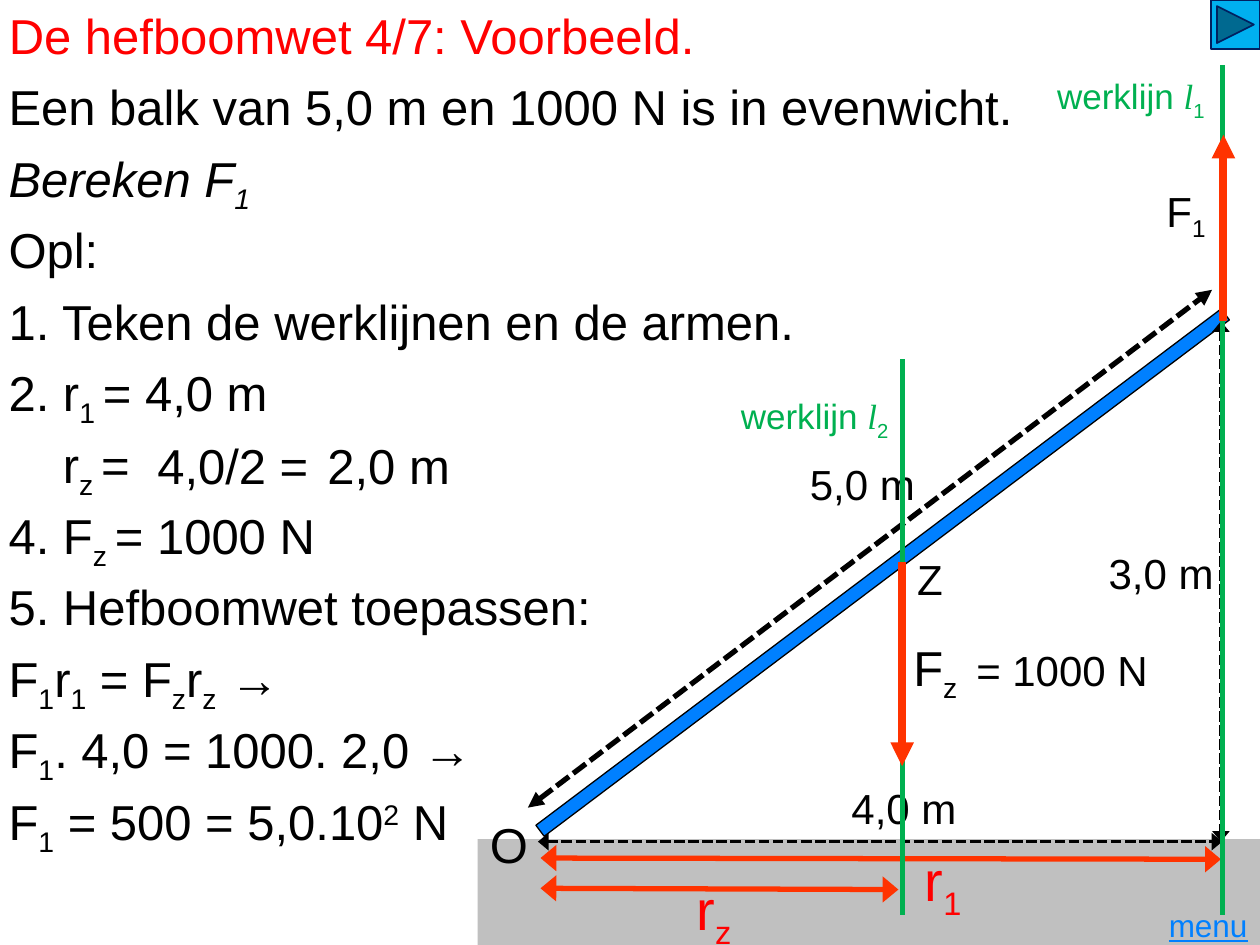
from lxml import etree
from pptx import Presentation
from pptx.dml.color import RGBColor
from pptx.enum import dml, shapes, text
from pptx.oxml import ns
from pptx.util import Inches, Pt

BLACK = RGBColor(0x00, 0x00, 0x00)
RED = RGBColor(0xFF, 0x00, 0x00)
FORCE = RGBColor(0xFF, 0x33, 0x00)
GREEN = RGBColor(0x00, 0xB0, 0x50)
BLUE = RGBColor(0x00, 0x80, 0xFF)
GREY = RGBColor(0xC0, 0xC0, 0xC0)
CYAN = RGBColor(0x00, 0xB0, 0xF0)
NAVY = RGBColor(0x00, 0x20, 0x60)

deck = Presentation()
deck.slide_width, deck.slide_height = Inches(10), Inches(7.5)
slide = deck.slides.add_slide(deck.slide_layouts[5])


def write(words, left, top, width, height=0.57, size=28, color=BLACK,
          italic=False, underline=False, right=False, middle=False, box=None):
    """Odd parts between ~ are subscripts, ^ marks a superscript, * a symbol."""
    box = box or slide.shapes.add_textbox(0, 0, 0, 0)
    box.left, box.top = Inches(left), Inches(top)
    box.width, box.height = Inches(width), Inches(height)
    frame = box.text_frame
    frame.word_wrap = True
    frame.auto_size = text.MSO_AUTO_SIZE.NONE
    frame.vertical_anchor = text.MSO_ANCHOR.MIDDLE if middle else text.MSO_ANCHOR.TOP
    para = frame.paragraphs[0]
    para.alignment = text.PP_ALIGN.RIGHT if right else text.PP_ALIGN.LEFT
    for spot, part in enumerate(words.split("~")):
        if not part:
            continue
        run = para.add_run()
        run.text = part.lstrip("^*")
        font = run.font
        font.size, font.color.rgb = Pt(size), color
        font.name = "Times New Roman" if part[0] == "*" else "Arial"
        font.italic = italic or part[0] == "*"
        font.underline = underline
        if spot % 2 and part[0] != "*":
            level = "30000" if part[0] == "^" else "-25000"
            run._r.get_or_add_rPr().set("baseline", level)


def draw(start, end, color, width, heads=(), span="med", dash=False):
    """Heads holds headEnd (at start) and tailEnd (at end)."""
    link = slide.shapes.add_connector(
        shapes.MSO_CONNECTOR.STRAIGHT, *map(Inches, start + end))
    link.line.color.rgb, link.line.width = color, Pt(width)
    if dash:
        link.line.dash_style = dml.MSO_LINE.SQUARE_DOT
    for head in heads:
        etree.SubElement(link.line._get_or_add_ln(), ns.qn("a:" + head),
                         type="triangle", w=span, len="med")
    etree.SubElement(link._element.spPr, ns.qn("a:effectLst"))


BOTH = ("headEnd", "tailEnd")
TIP = ("tailEnd",)

# Title
write("De hefboomwet 4/7: Voorbeeld.", -0.03, -0.01, 8.5, color=RED,
      box=slide.shapes.title)

# Ground, beam and forward button
for kind, place, turn, fill, edge, weight in [
    (shapes.MSO_SHAPE.RECTANGLE, (3.79, 6.66, 6.22, 0.88), 0, GREY, None, 0),
    (shapes.MSO_SHAPE.RECTANGLE, (6.95, 1.14, 0.11, 6.81), 53, BLUE, BLACK, 0.75),
    (shapes.MSO_SHAPE.ACTION_BUTTON_FORWARD_OR_NEXT, (9.61, 0, 0.39, 0.39),
     0, CYAN, NAVY, 1),
]:
    shape = slide.shapes.add_shape(kind, *map(Inches, place))
    shape.rotation = turn
    shape.shadow.inherit = False
    shape.fill.solid()
    shape.fill.fore_color.rgb = fill
    if edge is None:
        shape.line.fill.background()
    else:
        shape.line.color.rgb, shape.line.width = edge, Pt(weight)

# Problem and worked solution, one line per step
steps = [
    "Een balk van 5,0 m en 1000 N is in evenwicht.",
    "Bereken F~1",
    "Opl:",
    "1. Teken de werklijnen en de armen.",
    "2. r~1 ~= 4,0 m",
    None,
    "4. F~z ~= 1000 N",
    "5. Hefboomwet toepassen:",
    "F~1~r~1~ = F~z~r~z~ →",
    "F~1~. 4,0 = 1000. 2,0 →",
    "F~1~ = 500 = 5,0.10~^2~ N",
]
for row, step in enumerate(steps):
    if step:
        write(step, -0.03, 0.56 + 0.567 * row, 10 if row < 4 else 5.6,
              italic=step.startswith("Bereken"))
write("r~z ~=", 0.4, 3.4, 0.93)
write("4,0/2 =", 1.15, 3.41, 1.55)
write("2,0 m", 2.5, 3.41, 1.51)

# Dimensions
draw((9.69, 2.55), (9.69, 6.68), BLACK, 2, BOTH, "lg", dash=True)
draw((4.27, 6.68), (9.7, 6.68), BLACK, 2, BOTH, "lg", dash=True)
draw((4.19, 6.41), (9.62, 2.3), BLACK, 3, BOTH, dash=True)
for size, left, top in [("5,0 m", 6.33, 3.59), ("4,0 m", 6.66, 6.16),
                        ("3,0 m", 8.7, 4.3)]:
    write(size, left, top, 1.2, 0.5, size=24)

# Arms
for name, left, top, start, end in [
    ("r~z", 5.43, 6.89, (4.29, 7.05), (7.13, 7.06)),
    ("r~1", 7.24, 6.66, (4.29, 6.81), (9.69, 6.82)),
]:
    write(name, left, top, 0.83, 0.63, size=32, color=RED)
    draw(start, end, FORCE, 3, BOTH, "lg")

# Lines of action
for name, left, top, start, end in [
    ("werklijn ~*l~~1", 8.15, 0.54, (9.7, 0.52), (9.7, 7.26)),
    ("werklijn ~*l~~2", 5.64, 3.08, (7.16, 2.85), (7.16, 7.26)),
]:
    write(name, left, top, 1.51, 0.44, size=20, color=GREEN, right=True)
    draw(start, end, GREEN, 3)

# Forces
draw((9.71, 2.55), (9.71, 1.07), FORCE, 4.5, TIP)
draw((7.16, 4.46), (7.16, 6.08), FORCE, 4.5, TIP)
write("F~1", 9.16, 1.42, 0.83, 0.51, size=24)
write("F~z", 7.15, 5.01, 0.83)
write("= 1000 N", 7.65, 5.07, 1.66, 0.5, size=24)

# Points and menu
write("O", 3.79, 6.41, 0.67, 0.58, middle=True)
write("Z", 7.18, 4.3, 0.67, 0.58, size=24, middle=True)
write("menu", 9.06, 7.14, 0.94, 0.4, size=18, color=BLUE, underline=True,
      right=True, middle=True)

deck.save("out.pptx")
